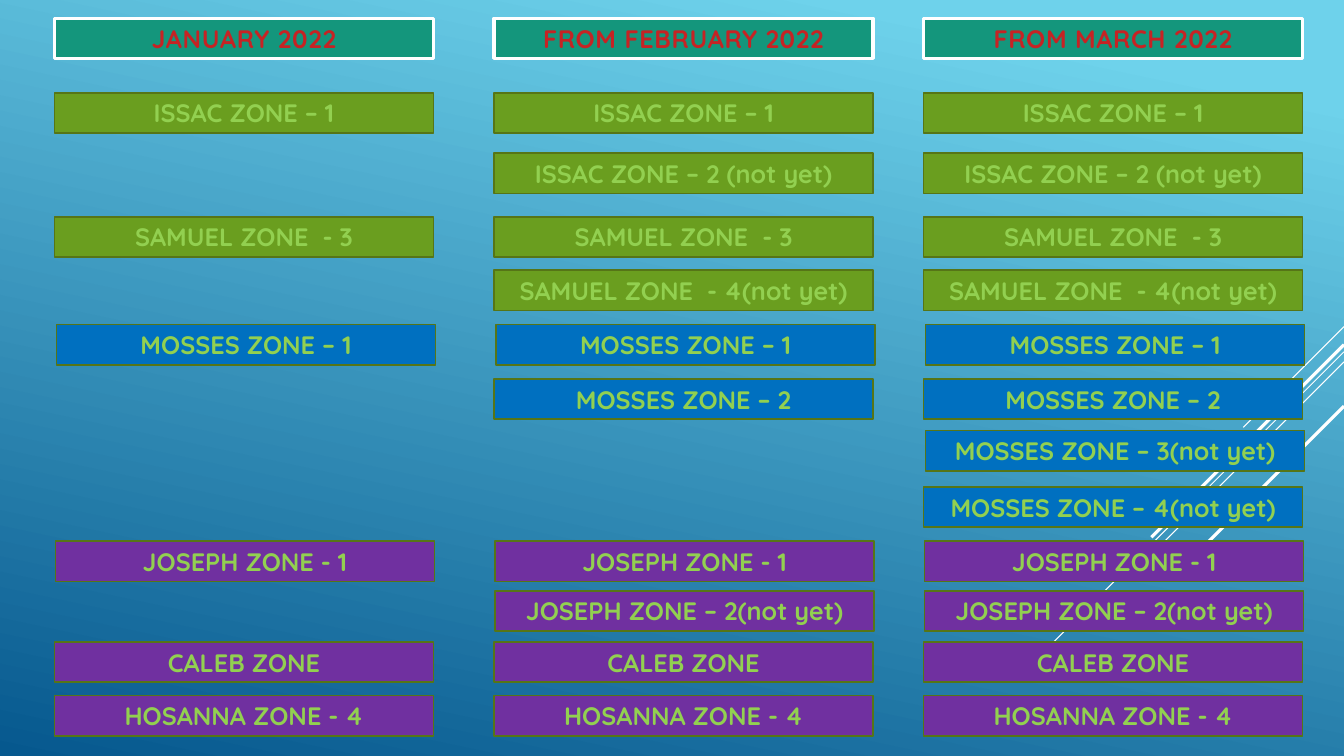
from lxml import etree
from pptx import Presentation
from pptx import util as u
from pptx.dml.color import RGBColor
from pptx.enum import shapes, text
from pptx.oxml import parse_xml
from pptx.oxml.ns import nsdecls, qn

COLOURS = {
    "sky": "6ED2EB", "deep": "06588E", "white": "FFFFFF", "teal": "14967C",
    "red": "C62324", "navy": "052F61", "black": "000000", "lime": "92D050",
    "green": "6A9E1F", "olive": "567517", "blue": "0070C0", "purple": "7030A0",
}
MONTHS = ["JANUARY 2022", "FROM FEBRUARY 2022", "FROM MARCH 2022"]
LEFTS = [0.54, 4.9, 9.16]
HEADING_TOP = 0.18
# Zone label, fill, top, shift to the right, index of the first month
ZONES = [
    ("ISSAC ZONE – 1", "green", 0.92, 0, 0),
    ("ISSAC ZONE – 2 (not yet)", "green", 1.52, 0, 1),
    ("SAMUEL ZONE  - 3", "green", 2.15, 0, 0),
    ("SAMUEL ZONE  - 4(not yet)", "green", 2.68, 0, 1),
    ("MOSSES ZONE – 1", "blue", 3.22, 0.02, 0),
    ("MOSSES ZONE – 2", "blue", 3.76, 0, 1),
    ("MOSSES ZONE – 3(not yet)", "blue", 4.27, 0.02, 2),
    ("MOSSES ZONE – 4(not yet)", "blue", 4.83, 0, 2),
    ("JOSEPH ZONE - 1", "purple", 5.37, 0.01, 0),
    ("JOSEPH ZONE – 2(not yet)", "purple", 5.86, 0.01, 1),
    ("CALEB ZONE", "purple", 6.37, 0, 0),
    ("HOSANNA ZONE - 4", "purple", 6.9, 0, 0),
]
SLIDE_WIDTH = 13.33
# Top at the right edge, length along each axis, line width
RAYS = [(3.24, 1, 0.75), (3.49, 3.26, 0.75), (3.59, 2.07, 0.75),
        (3.42, 1.91, 2.25), (4.03, 1.39, 2.25)]


def colour(name):
    return RGBColor.from_string(COLOURS[name])


class ZonePage:
    """Draws the zone plan in one style on the current slide."""

    font = "Quicksand"
    size = u.Pt(18)
    width, height = u.Inches(3.76), u.Inches(0.4)

    def __init__(self, page):
        self.page = page

    def background(self):
        fill = self.page.background.fill
        fill.gradient()
        fill.gradient_angle = 258
        stops = zip(fill.gradient_stops, [(0.1, "sky"), (1, "deep")])
        for stop, (position, name) in stops:
            stop.position = position
            stop.color.rgb = colour(name)

    def ray(self, top, length, weight):
        line = self.page.shapes.add_connector(
            shapes.MSO_CONNECTOR.STRAIGHT, u.Inches(SLIDE_WIDTH), u.Inches(top),
            u.Inches(SLIDE_WIDTH - length), u.Inches(top + length))
        line.line.color.rgb = colour("white")
        line.line.width = u.Pt(weight)
        etree.SubElement(line._element.spPr, qn("a:effectLst"))

    def bar(self, label, left, top, fill, edge, weight, ink, outline):
        box = self.page.shapes.add_shape(
            shapes.MSO_SHAPE.RECTANGLE, u.Inches(left), u.Inches(top),
            self.width, self.height)
        box.shadow.inherit = False
        box.fill.solid()
        box.fill.fore_color.rgb = colour(fill)
        box.line.color.rgb = colour(edge)
        box.line.width = u.Pt(weight)
        frame = box.text_frame
        frame.text = label
        frame.word_wrap = True
        frame.auto_size = text.MSO_AUTO_SIZE.SHAPE_TO_FIT_TEXT
        para = frame.paragraphs[0]
        para.alignment = text.PP_ALIGN.CENTER
        span = para.runs[0]
        span.font.name, span.font.size, span.font.bold = self.font, self.size, True
        span.font.color.rgb = colour(ink)
        properties = span.font._element
        properties.insert(0, parse_xml(
            f'<a:ln {nsdecls("a")} w="9525"><a:solidFill>'
            f'<a:srgbClr val="{COLOURS[outline]}"/></a:solidFill></a:ln>'))
        return properties

    def heading(self, label, left):
        properties = self.bar(label, left, HEADING_TOP, "teal", "white", 2.25,
                              "red", "navy")
        properties.set("spc", "50")
        properties.find(qn("a:solidFill")).addnext(parse_xml(
            f'<a:effectLst {nsdecls("a")}><a:outerShdw blurRad="38100" '
            f'dist="25400" dir="2700000"><a:srgbClr val="{COLOURS["black"]}">'
            '<a:alpha val="40000"/></a:srgbClr></a:outerShdw></a:effectLst>'))

    def zone(self, label, left, top, fill):
        self.bar(label, left, top, fill, "olive", 1.25, "lime", "black")


def main():
    deck = Presentation()
    deck.slide_width, deck.slide_height = u.Inches(SLIDE_WIDTH), u.Inches(7.5)
    plan = ZonePage(deck.slides.add_slide(deck.slide_layouts[6]))
    plan.background()
    for ray in RAYS:
        plan.ray(*ray)
    for month, (title, left) in enumerate(zip(MONTHS, LEFTS)):
        plan.heading(title, left)
        for label, fill, top, shift, first in ZONES:
            if month >= first:
                plan.zone(label, left + shift, top, fill)
    deck.save("out.pptx")


if __name__ == "__main__":
    main()
